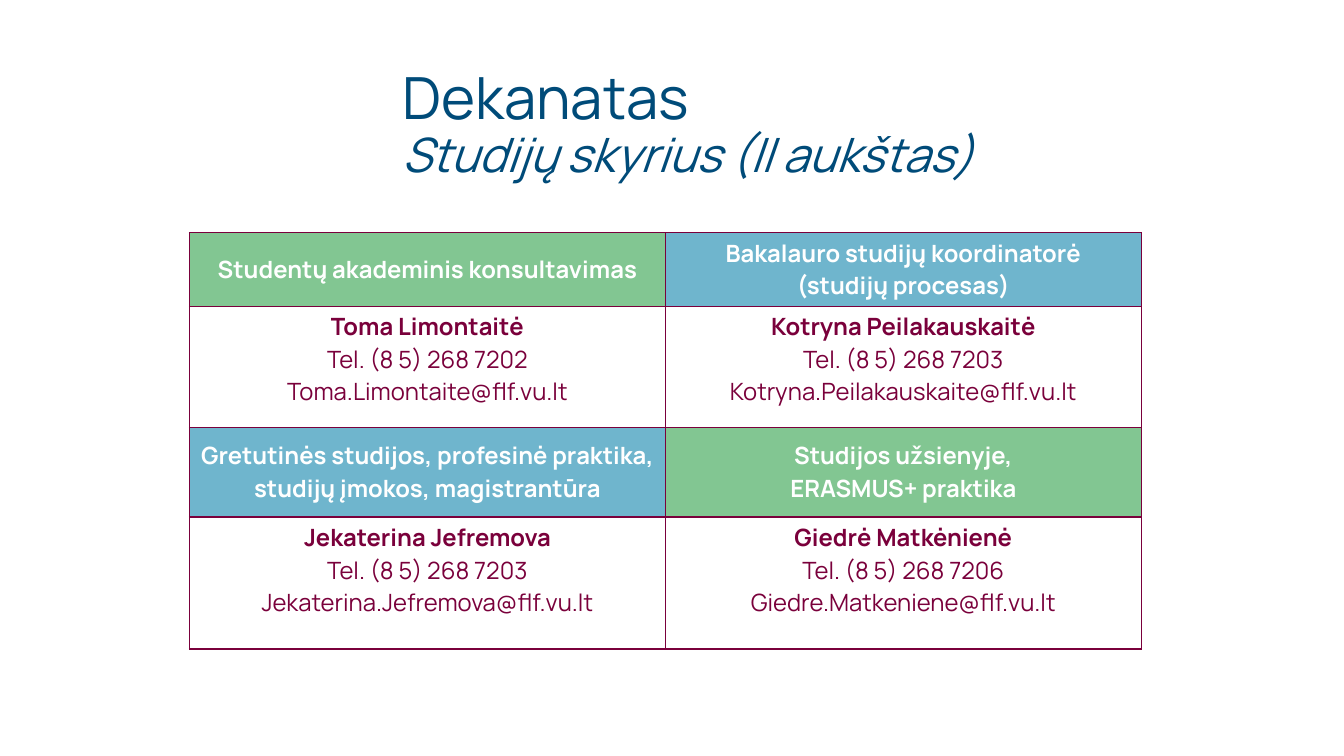
"""Build the slide listing the contacts of the dean's office study department."""
import dataclasses

import lxml.etree
import pptx
import pptx.dml.color
import pptx.enum.text
import pptx.oxml.ns
import pptx.util

Inches = pptx.util.Inches
COLOURS = {
    "title": "004B79",
    "wine": "7A003B",
    "green": "82C692",
    "blue": "6FB5CD",
    "white": "FFFFFF",
}
FONT_NAME = "Manrope"
TEXT_SIZE = 17
COLUMN_WIDTH = 4.72
ROW_HEIGHTS = (0.73, 1.2, 0.89, 1.31)


@dataclasses.dataclass(frozen=True)
class Contact:
    """One person with the duties shown above the contact details."""

    duties: tuple[str, ...]
    fill: str
    name: str
    phone: str
    email: str


CONTACTS = (
    Contact(("Studentų akademinis konsultavimas",), "green",
            "Toma Limontaitė", "7202", "Toma.Limontaite@flf.vu.lt"),
    Contact(("Bakalauro studijų koordinatorė", "(studijų procesas)"), "blue",
            "Kotryna Peilakauskaitė", "7203", "Kotryna.Peilakauskaite@flf.vu.lt"),
    Contact(("Gretutinės studijos, profesinė praktika, studijų įmokos, magistrantūra",), "blue",
            "Jekaterina Jefremova", "7203", "Jekaterina.Jefremova@flf.vu.lt"),
    Contact(("Studijos užsienyje,", "ERASMUS+ praktika"), "green",
            "Giedrė Matkėnienė", "7206", "Giedre.Matkeniene@flf.vu.lt"),
)


def set_attributes(target: object, values: dict) -> None:
    """Set every named attribute on the target."""
    for name, value in values.items():
        setattr(target, name, value)


def add_text(paragraph, text: str, size: float, colour: str, **style) -> None:
    """Add a formatted run to the paragraph."""
    run = paragraph.add_run()
    run.text = text
    set_attributes(run.font, {"name": FONT_NAME, "size": pptx.util.Pt(size), **style})
    run.font.color.rgb = pptx.dml.color.RGBColor.from_string(COLOURS[colour])


def add_borders(cell) -> None:
    """Draw a thin line on all four sides of the cell."""
    properties = cell._tc.get_or_add_tcPr()
    for side in ("lnL", "lnR", "lnT", "lnB"):
        line = lxml.etree.SubElement(
            properties, pptx.oxml.ns.qn(f"a:{side}"), w=str(pptx.util.Pt(1)))
        fill = lxml.etree.SubElement(line, pptx.oxml.ns.qn("a:solidFill"))
        lxml.etree.SubElement(fill, pptx.oxml.ns.qn("a:srgbClr"), val=COLOURS["wine"])


def fill_cell(cell, lines: tuple[str, ...], colour: str, bold_lines: int, anchor) -> None:
    """Write centred lines into a bordered cell, the first ones in bold."""
    set_attributes(cell, {
        "vertical_anchor": anchor,
        "margin_left": Inches(0.07), "margin_right": Inches(0.07),
        "margin_top": Inches(0.04), "margin_bottom": Inches(0.04),
    })
    add_borders(cell)
    for index, text in enumerate(lines):
        frame = cell.text_frame
        paragraph = frame.add_paragraph() if index else frame.paragraphs[0]
        paragraph.alignment = pptx.enum.text.PP_ALIGN.CENTER
        add_text(paragraph, text, TEXT_SIZE, colour, bold=index < bold_lines)


def add_title(slide) -> None:
    """Place and format the two-line title."""
    title = slide.shapes.title
    set_attributes(title, {
        "left": Inches(3.95), "top": Inches(0.58),
        "width": Inches(7.25), "height": Inches(1.34),
    })
    frame = title.text_frame
    margins = {f"margin_{side}": Inches(0.04) for side in ("left", "right", "top", "bottom")}
    set_attributes(frame, {
        **margins,
        "word_wrap": True,
        "auto_size": pptx.enum.text.MSO_AUTO_SIZE.NONE,
        "vertical_anchor": pptx.enum.text.MSO_ANCHOR.MIDDLE,
    })
    add_text(frame.paragraphs[0], "Dekanatas", 41.5, "title")
    add_text(frame.add_paragraph(), "Studijų skyrius (II aukštas)", 33.8, "title", italic=True)
    for paragraph in frame.paragraphs:
        set_attributes(paragraph, {
            "alignment": pptx.enum.text.PP_ALIGN.LEFT, "line_spacing": 0.9,
        })


def add_contact_table(slide) -> None:
    """Add the contacts, two to a band of duties and details."""
    table = slide.shapes.add_table(
        len(ROW_HEIGHTS), 2, Inches(1.88), Inches(2.31),
        Inches(2 * COLUMN_WIDTH), Inches(sum(ROW_HEIGHTS))).table
    set_attributes(table, {"first_row": False, "horz_banding": False})
    for column in table.columns:
        column.width = Inches(COLUMN_WIDTH)
    for row, height in zip(table.rows, ROW_HEIGHTS):
        row.height = Inches(height)
    for index, contact in enumerate(CONTACTS):
        band, column_index = divmod(index, 2)
        heading = table.cell(2 * band, column_index)
        fill_cell(heading, contact.duties, "white", len(contact.duties),
                  pptx.enum.text.MSO_ANCHOR.MIDDLE)
        heading.fill.solid()
        heading.fill.fore_color.rgb = pptx.dml.color.RGBColor.from_string(COLOURS[contact.fill])
        details = table.cell(2 * band + 1, column_index)
        lines = (contact.name, f"Tel. (8 5) 268 {contact.phone}", contact.email)
        fill_cell(details, lines, "wine", 1, pptx.enum.text.MSO_ANCHOR.TOP)
        details.fill.background()


def main() -> None:
    """Build and save the presentation."""
    presentation = pptx.Presentation()
    set_attributes(presentation, {"slide_width": Inches(13.33), "slide_height": Inches(7.5)})
    slide = presentation.slides.add_slide(presentation.slide_layouts.get_by_name("Title Only"))
    add_title(slide)
    add_contact_table(slide)
    presentation.save("out.pptx")


if __name__ == "__main__":
    main()
